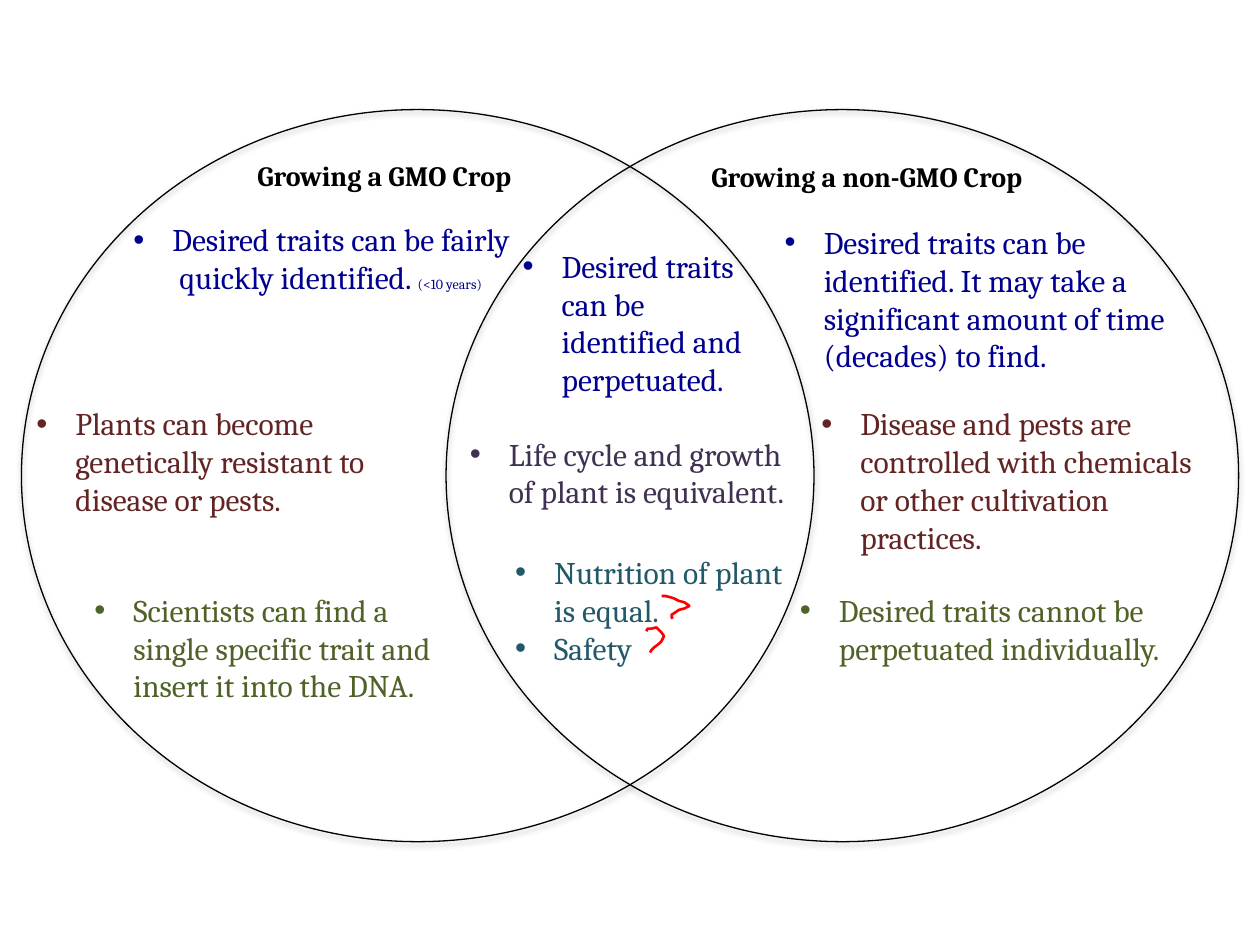
from dataclasses import dataclass

from lxml.etree import SubElement
from pptx import Presentation
from pptx.dml.color import RGBColor
from pptx.enum.shapes import MSO_SHAPE
from pptx.enum.text import MSO_AUTO_SIZE, PP_ALIGN
from pptx.oxml.ns import qn
from pptx.util import Inches, Pt


@dataclass(frozen=True)
class Theme:
    """Colours, font and type sizes of the slide."""
    font: str = "Cambria"
    heading_size: int = 16
    body_size: int = 18
    note_size: int = 8
    black: str = "000000"
    identify: str = "000090"
    resist: str = "632523"
    insert: str = "4F6228"
    growth: str = "403152"
    nutrition: str = "215968"
    ink: str = "FF0000"


THEME = Theme()

CIRCLE_LEFTS = (0.17, 3.54)

HEADINGS = (
    (1.36, 1.21, "Growing a GMO Crop"),
    (5.19, 1.22, "Growing a non-GMO Crop"),
)

POINTS = (
    (6.13, 1.72, 3.56, 1.31, THEME.identify,
     ["Desired traits can be identified. It may take a significant amount of time (decades) to find."], ""),
    (4.05, 1.91, 1.97, 1.31, THEME.identify,
     ["Desired traits can be identified and perpetuated."], ""),
    (0.96, 1.7, 3.19, 0.71, THEME.identify,
     ["Desired traits can be fairly\v quickly identified. "], "(<10 years)"),
    (0.19, 3.16, 3.35, 1.01, THEME.resist,
     ["Plants can become genetically resistant to disease or pests."], ""),
    (0.65, 4.64, 3.08, 1.01, THEME.insert,
     ["Scientists can find a single specific trait and insert it into the DNA."], ""),
    (6.25, 4.64, 3.44, 0.71, THEME.insert,
     ["Desired traits cannot be perpetuated individually."], ""),
    (6.42, 3.16, 3.27, 1.31, THEME.resist,
     ["Disease and pests are controlled with chemicals or other cultivation practices."], ""),
    (3.99, 4.34, 2.39, 1.01, THEME.nutrition,
     ["Nutrition of plant is equal.", "Safety"], ""),
    (3.63, 3.4, 2.79, 0.71, THEME.growth,
     ["Life cycle and growth of plant is equivalent."], ""),
)

INK_MARKS = (
    ((5.13, 5.01), (5.14, 4.99), (5.17, 4.99), (5.21, 4.98), (5.22, 4.99), (5.25, 5.02),
     (5.27, 5.05), (5.26, 5.07), (5.25, 5.09), (5.23, 5.11), (5.19, 5.14), (5.17, 5.16),
     (5.16, 5.18)),
    ((5.25, 4.73), (5.28, 4.73), (5.32, 4.74), (5.35, 4.75), (5.39, 4.77), (5.43, 4.78),
     (5.46, 4.8), (5.47, 4.81), (5.43, 4.83), (5.39, 4.84), (5.36, 4.86), (5.33, 4.88),
     (5.33, 4.9), (5.34, 4.91)),
)


def set_outline(shape, color, width):
    """Leave the shape unfilled and give it a plain line."""
    shape.shadow.inherit = False
    shape.fill.background()
    shape.line.color.rgb = RGBColor.from_string(color)
    shape.line.width = Pt(width)


def add_soft_shadow(shape):
    """Put a faint shadow just below the shape."""
    effects = shape._element.spPr.find(qn("a:effectLst"))
    shadow = SubElement(effects, qn("a:outerShdw"), blurRad=str(Pt(3.1)),
                        dist=str(Pt(1.8)), dir="5400000", rotWithShape="0")
    color = SubElement(shadow, qn("a:srgbClr"), val=THEME.black)
    SubElement(color, qn("a:alpha"), val="35000")


def add_circle(slide, left):
    """Draw one ring of the Venn diagram."""
    circle = slide.shapes.add_shape(MSO_SHAPE.OVAL, Inches(left), Inches(0.87),
                                    Inches(6.29), Inches(5.81))
    set_outline(circle, THEME.black, 0.75)
    add_soft_shadow(circle)


def add_text_frame(slide, left, top, width, height):
    """Add a wrapping text box and return its frame."""
    box = slide.shapes.add_textbox(Inches(left), Inches(top), Inches(width), Inches(height))
    box.text_frame.word_wrap = True
    return box.text_frame


def style_paragraph(paragraph, size, color, bold=False):
    """Set the font of a whole paragraph."""
    font = paragraph.font
    font.name, font.size, font.bold = THEME.font, Pt(size), bold
    font.color.rgb = RGBColor.from_string(color)


def add_bullet(paragraph):
    """Give the paragraph a hanging round bullet."""
    properties = paragraph._p.get_or_add_pPr()
    properties.set("marL", str(Inches(0.31)))
    properties.set("indent", str(Inches(-0.31)))
    bullet_font = properties.makeelement(qn("a:buFont"), {"typeface": "Arial"})
    bullet = properties.makeelement(qn("a:buChar"), {"char": "•"})
    properties.insert(0, bullet_font)
    properties.insert(1, bullet)


def add_heading(slide, left, top, text):
    """Add the centred heading of a ring."""
    heading = add_text_frame(slide, left, top, 3.38, 0.62).paragraphs[0]
    heading.text = text
    heading.alignment = PP_ALIGN.CENTER
    style_paragraph(heading, THEME.heading_size, THEME.black, bold=True)


def add_points(slide, left, top, width, height, color, lines, note):
    """Add bulleted statements, with an optional small note at the end."""
    frame = add_text_frame(slide, left, top, width, height)
    frame.auto_size = MSO_AUTO_SIZE.SHAPE_TO_FIT_TEXT
    for index, line in enumerate(lines):
        point = frame.add_paragraph() if index else frame.paragraphs[0]
        point.text = line
        style_paragraph(point, THEME.body_size, color)
        add_bullet(point)
    if note:
        aside = point.add_run()
        aside.text = note
        aside.font.size = Pt(THEME.note_size)


def add_ink_mark(slide, points):
    """Draw a handwritten stroke through the points."""
    start, *rest = [(Inches(x), Inches(y)) for x, y in points]
    builder = slide.shapes.build_freeform(*start)
    builder.add_line_segments(rest, close=False)
    set_outline(builder.convert_to_shape(), THEME.ink, 1.5)


def main():
    """Build and save the Venn diagram slide."""
    presentation = Presentation()
    presentation.slide_width, presentation.slide_height = Inches(10), Inches(7.5)
    slide = presentation.slides.add_slide(presentation.slide_layouts[6])
    for left in CIRCLE_LEFTS:
        add_circle(slide, left)
    for heading in HEADINGS:
        add_heading(slide, *heading)
    for points in POINTS:
        add_points(slide, *points)
    for mark in INK_MARKS:
        add_ink_mark(slide, mark)
    presentation.save("out.pptx")


if __name__ == "__main__":
    main()
